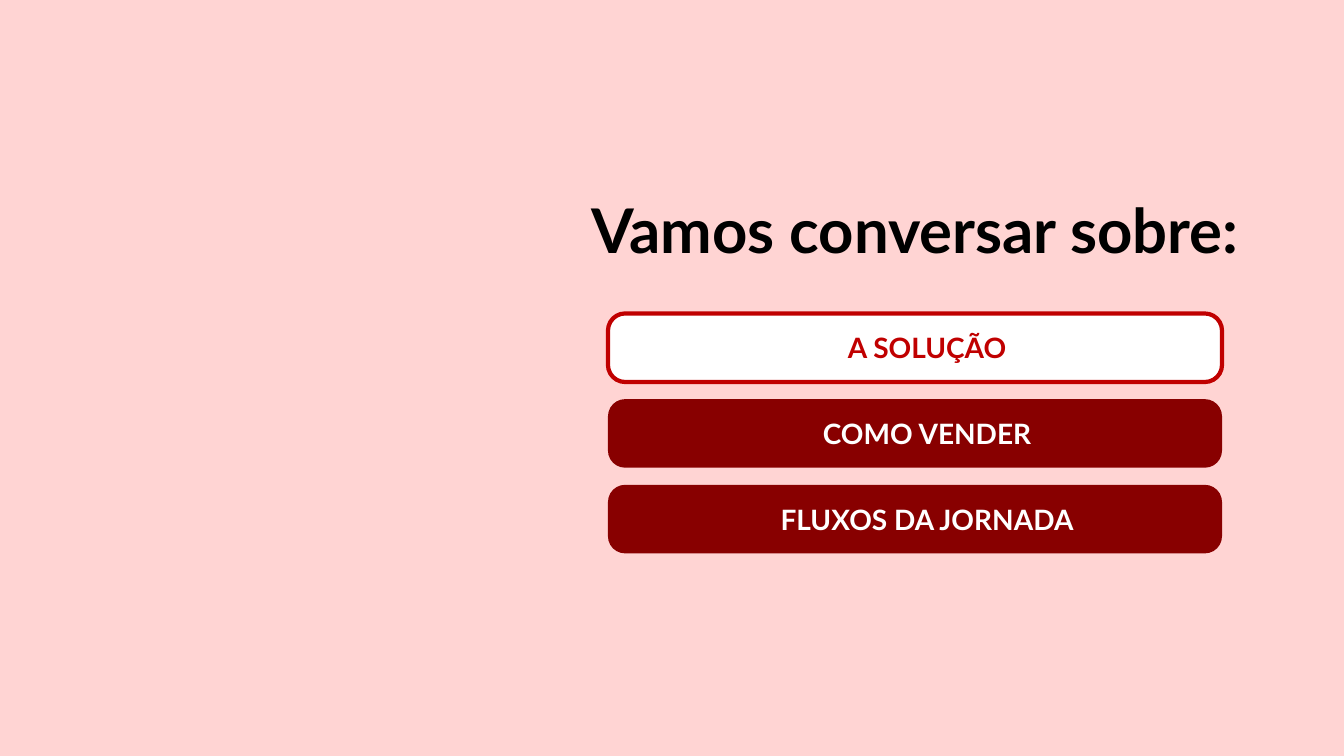
from dataclasses import dataclass

from pptx import Presentation
from pptx import util as u
from pptx.dml.color import RGBColor
from pptx.enum import shapes, text
from pptx.slide import Slide
from pptx.text.text import _Paragraph as Paragraph

COLOURS = {
    "background": "FFD4D3",
    "title": "000000",
    "white": "FFFFFF",
    "red": "C00000",
    "dark_red": "880000",
}
FONT = "Lato"
FIRST_TOP = 3.11
TOPIC_PITCH = 0.85


@dataclass
class Topic:
    label: str
    fill: str = "dark_red"
    ink: str = "white"
    outline: str | None = None


TOPICS = [
    Topic("A SOLUÇÃO", fill="white", ink="red", outline="red"),
    Topic("COMO VENDER"),
    Topic("FLUXOS DA JORNADA"),
]


def colour(name: str) -> RGBColor:
    return RGBColor.from_string(COLOURS[name])


def format_paragraph(paragraph: Paragraph, size: int, ink: str) -> None:
    paragraph.alignment = text.PP_ALIGN.CENTER
    paragraph.font.name = FONT
    paragraph.font.size = u.Pt(size)
    paragraph.font.bold = True
    paragraph.font.color.rgb = colour(ink)


def add_title(slide: Slide) -> None:
    title = slide.shapes.title
    title.left, title.top = u.Inches(5.25), u.Inches(1.85)
    title.width, title.height = u.Inches(7.66), u.Inches(0.84)
    frame = title.text_frame
    frame.text = "Vamos conversar sobre:"
    frame.vertical_anchor = text.MSO_ANCHOR.TOP
    frame.auto_size = text.MSO_AUTO_SIZE.SHAPE_TO_FIT_TEXT
    format_paragraph(frame.paragraphs[0], 44, "title")


def add_topic(slide: Slide, topic: Topic, top: float) -> None:
    button = slide.shapes.add_shape(
        shapes.MSO_SHAPE.ROUNDED_RECTANGLE,
        u.Inches(6.03), u.Inches(top), u.Inches(6.09), u.Inches(0.68),
    )
    button.adjustments[0] = 0.25
    button.shadow.inherit = False
    button.fill.solid()
    button.fill.fore_color.rgb = colour(topic.fill)
    if topic.outline:
        button.line.color.rgb = colour(topic.outline)
        button.line.width = u.Pt(3)
    else:
        button.line.fill.background()
    frame = button.text_frame
    frame.text = topic.label
    frame.vertical_anchor = text.MSO_ANCHOR.MIDDLE
    paragraph = frame.paragraphs[0]
    paragraph._p.get_or_add_pPr().set("marL", str(u.Inches(0.24)))
    format_paragraph(paragraph, 20, topic.ink)


def main() -> None:
    presentation = Presentation()
    presentation.slide_width = u.Inches(13.33)
    presentation.slide_height = u.Inches(7.5)
    title_only = presentation.slide_layouts.get_by_name("Title Only")
    slide = presentation.slides.add_slide(title_only)
    slide.background.fill.solid()
    slide.background.fill.fore_color.rgb = colour("background")
    add_title(slide)
    for row, topic in enumerate(TOPICS):
        add_topic(slide, topic, FIRST_TOP + row * TOPIC_PITCH)
    presentation.save("out.pptx")


if __name__ == "__main__":
    main()
